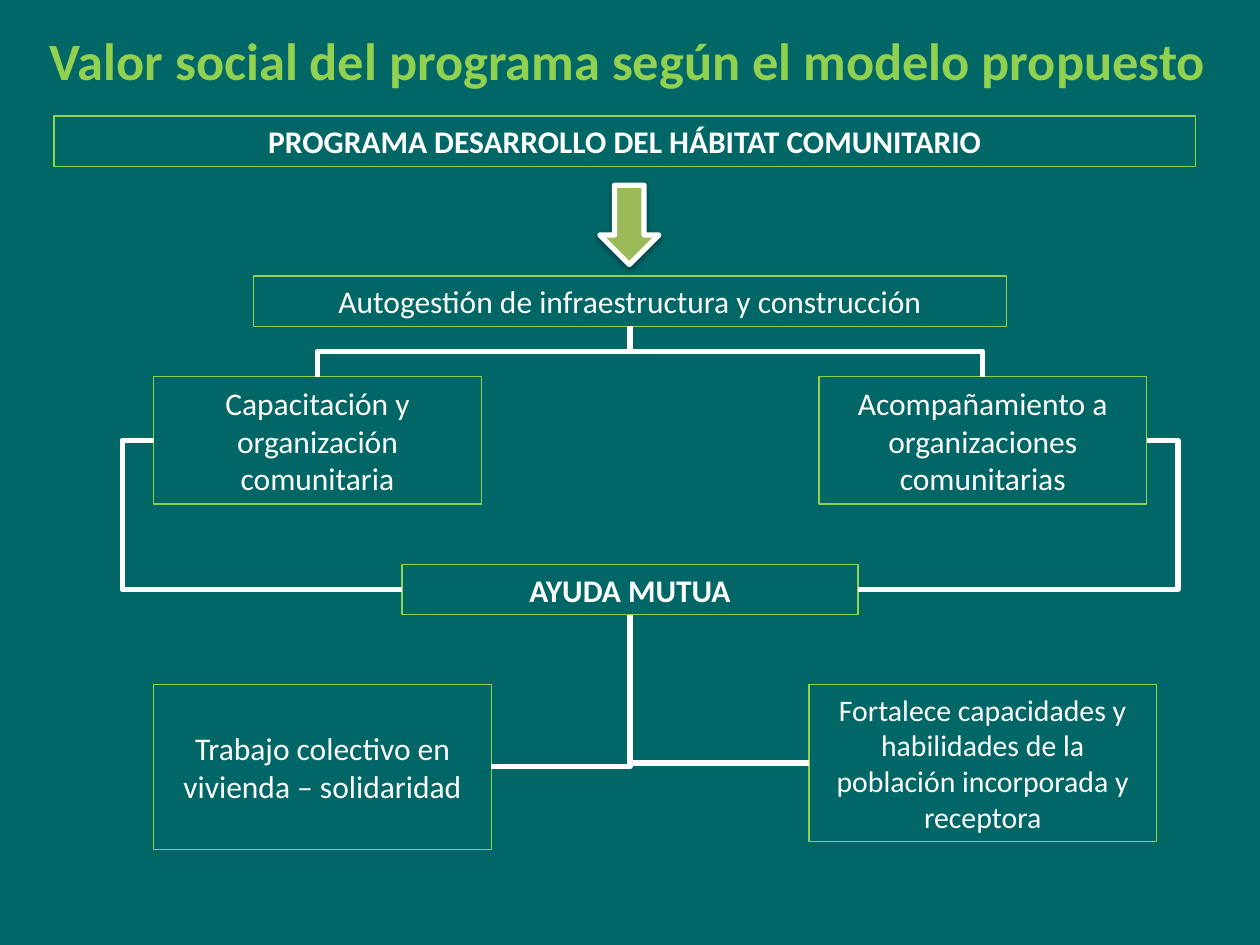
from lxml import etree
from pptx import Presentation
from pptx.dml.color import RGBColor
from pptx.enum.shapes import MSO_CONNECTOR, MSO_SHAPE
from pptx.enum.text import MSO_ANCHOR, PP_ALIGN
from pptx.oxml.ns import qn
from pptx.util import Inches, Pt

RECTANGLE = MSO_SHAPE.RECTANGLE
DOWN_ARROW = MSO_SHAPE.DOWN_ARROW
ELBOW = MSO_CONNECTOR.ELBOW
CENTER = PP_ALIGN.CENTER
MIDDLE = MSO_ANCHOR.MIDDLE

TEAL = RGBColor(0x00, 0x66, 0x66)
LIME = RGBColor(0x92, 0xD0, 0x50)
OLIVE = RGBColor(0x9B, 0xBB, 0x59)
WHITE = RGBColor(0xFF, 0xFF, 0xFF)

TOP, LEFT, BOTTOM, RIGHT = range(4)


def write(frame, text, size=18, color=WHITE, bold=False):
    frame.word_wrap = True
    frame.vertical_anchor = MIDDLE
    paragraph = frame.paragraphs[0]
    paragraph.alignment = CENTER
    run = paragraph.add_run()
    run.text = text
    run.font.name = "Calibri"
    run.font.size = Pt(size)
    run.font.bold = bold
    run.font.color.rgb = color


prs = Presentation()
prs.slide_width = Inches(10)
prs.slide_height = Inches(7.5)
slide = prs.slides.add_slide(prs.slide_layouts[5])
slide.background.fill.solid()
slide.background.fill.fore_color.rgb = TEAL

title = slide.shapes.title
title.left, title.top = Inches(0.16), Inches(0.05)
title.width, title.height = Inches(9.65), Inches(0.84)
write(title.text_frame, "Valor social del programa según el modelo propuesto",
      size=30, color=LIME, bold=True)

steps = [
    ("programa", "PROGRAMA DESARROLLO DEL HÁBITAT COMUNITARIO",
     (0.43, 0.92, 9.06, 0.4), {"bold": True}),
    ("autogestion", "Autogestión de infraestructura y construcción",
     (2.01, 2.19, 5.98, 0.4), {}),
    ("capacitacion", "Capacitación y organización comunitaria",
     (1.22, 2.99, 2.6, 1.01), {}),
    ("acompanamiento", "Acompañamiento a organizaciones comunitarias",
     (6.5, 2.99, 2.6, 1.01), {}),
    ("ayuda", "AYUDA MUTUA", (3.19, 4.48, 3.62, 0.4), {"bold": True}),
    ("trabajo", "Trabajo colectivo en vivienda – solidaridad",
     (1.22, 5.43, 2.68, 1.31), {}),
    ("capacidades",
     "Fortalece capacidades y habilidades de la población incorporada y receptora",
     (6.42, 5.43, 2.76, 1.25), {"size": 17}),
]
boxes = {}
for key, text, place, text_format in steps:
    box = slide.shapes.add_shape(RECTANGLE, *[Inches(v) for v in place])
    box.shadow.inherit = False
    box.fill.background()
    box.line.color.rgb = LIME
    box.line.width = Pt(0.75)
    write(box.text_frame, text, **text_format)
    boxes[key] = box

links = [
    ("autogestion", BOTTOM, "acompanamiento", TOP, "bentConnector3", 50000),
    ("autogestion", BOTTOM, "capacitacion", TOP, "bentConnector3", 50000),
    ("acompanamiento", RIGHT, "ayuda", RIGHT, "bentConnector3", -10900),
    ("capacitacion", LEFT, "ayuda", LEFT, "bentConnector3", -12700),
    ("ayuda", BOTTOM, "capacidades", LEFT, "bentConnector2", None),
    ("ayuda", BOTTOM, "trabajo", RIGHT, "bentConnector2", None),
]
for source, source_side, target, target_side, bend, adjust in links:
    link = slide.shapes.add_connector(ELBOW, 0, 0, 0, 0)
    link.begin_connect(boxes[source], source_side)
    link.end_connect(boxes[target], target_side)
    link.line.color.rgb = WHITE
    link.line.width = Pt(3)
    properties = link._element.spPr
    etree.SubElement(properties, qn("a:effectLst"))
    geometry = properties.find(qn("a:prstGeom"))
    geometry.set("prst", bend)
    if adjust is not None:
        guide = etree.SubElement(geometry.find(qn("a:avLst")), qn("a:gd"))
        guide.set("name", "adj1")
        guide.set("fmla", f"val {adjust}")
    if source_side == BOTTOM:
        goes_right = link.end_x > link.begin_x
        across, down = link.width, link.height
        link.left += (across - down) // 2
        link.top += (down - across) // 2
        link.width, link.height = down, across
        frame = properties.find(qn("a:xfrm"))
        frame.set("rot", "16200000" if goes_right else "5400000")
        frame.set("flipH", "1" if goes_right else "0")

arrow = slide.shapes.add_shape(DOWN_ARROW, Inches(4.76), Inches(1.47),
                               Inches(0.47), Inches(0.63))
arrow.fill.solid()
arrow.fill.fore_color.rgb = OLIVE
arrow.line.color.rgb = WHITE
arrow.line.width = Pt(3)
arrow.shadow.inherit = False
effects = arrow._element.spPr.find(qn("a:effectLst"))
shadow = etree.SubElement(effects, qn("a:outerShdw"), blurRad=str(Pt(3.1)),
                          dist=str(Pt(1.6)), dir="5400000", rotWithShape="0")
shade = etree.SubElement(shadow, qn("a:srgbClr"), val="000000")
etree.SubElement(shade, qn("a:alpha"), val="38000")

prs.save("out.pptx")
